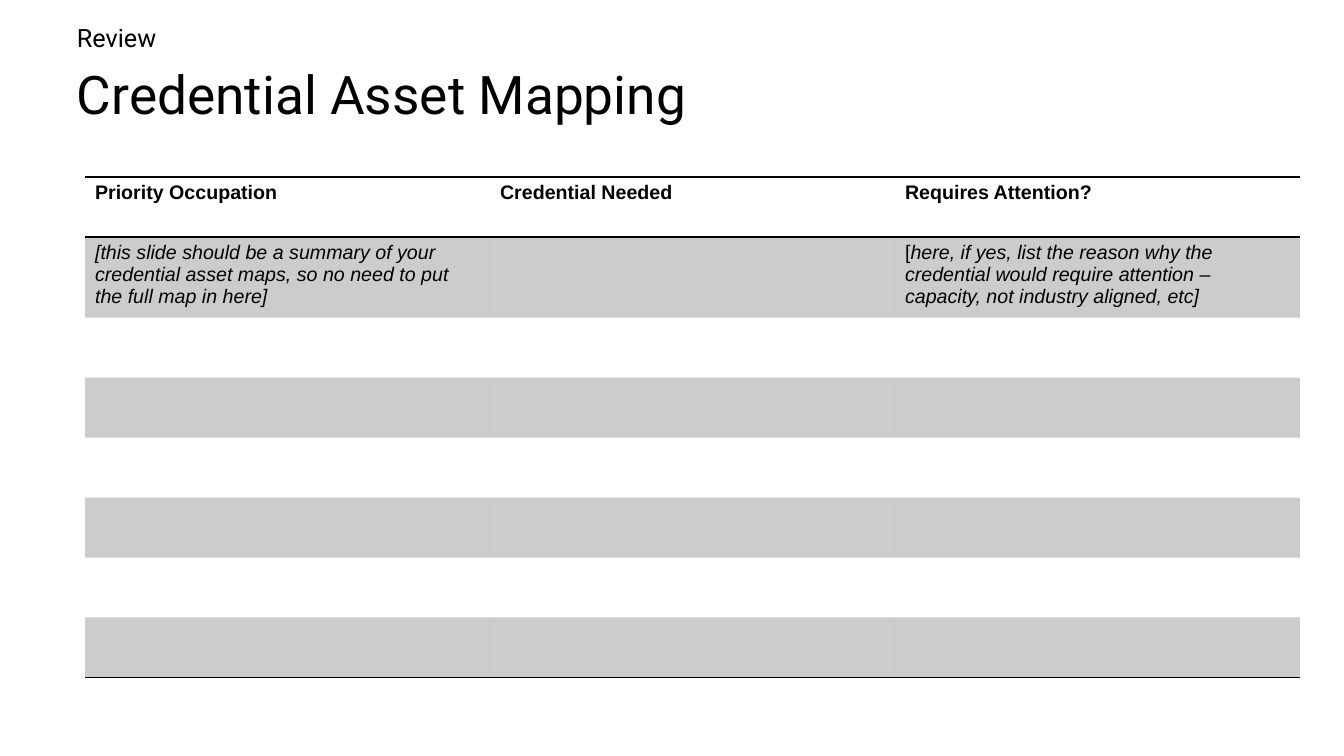
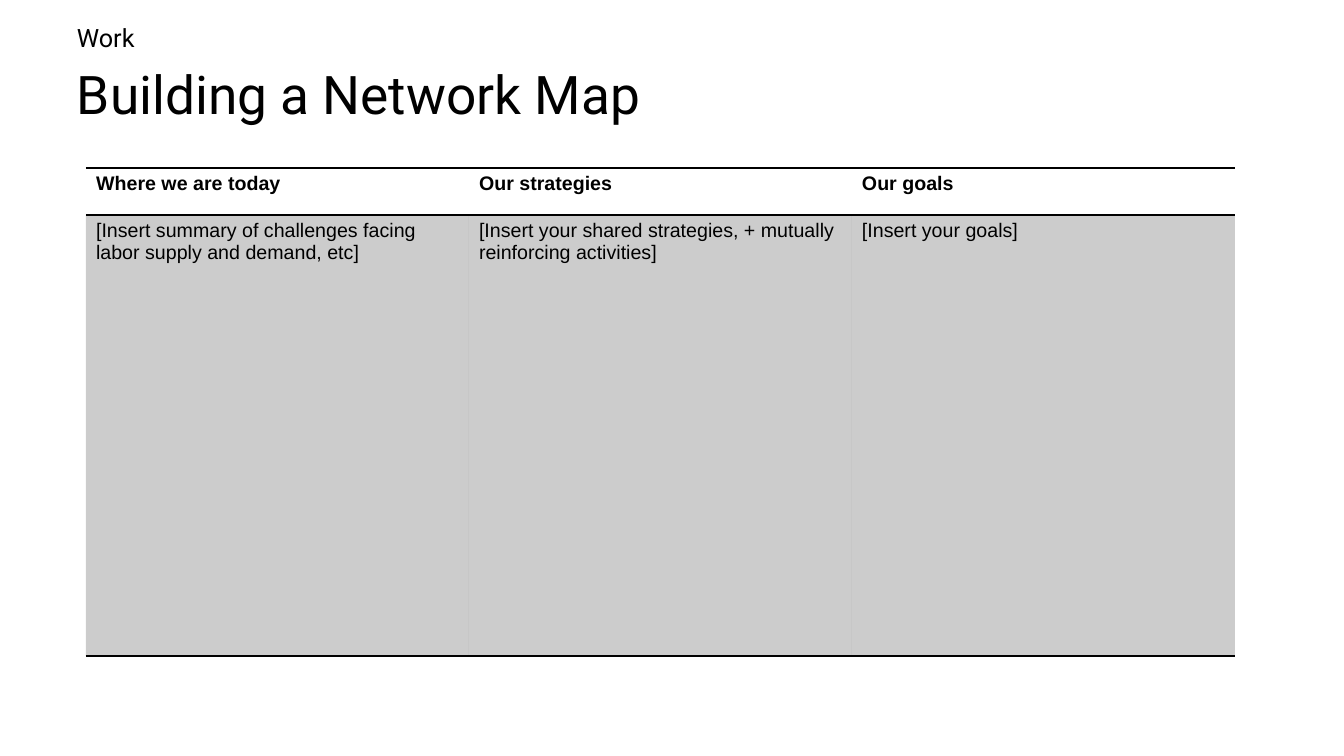
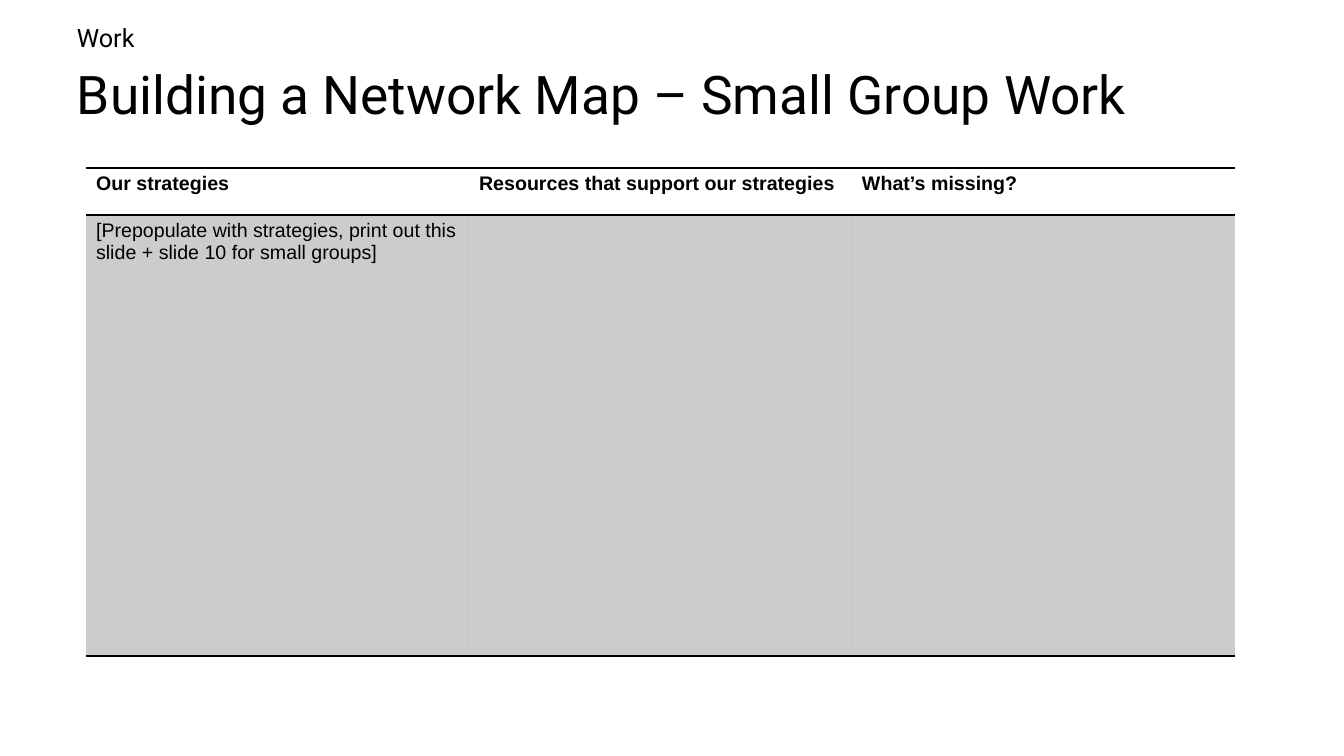
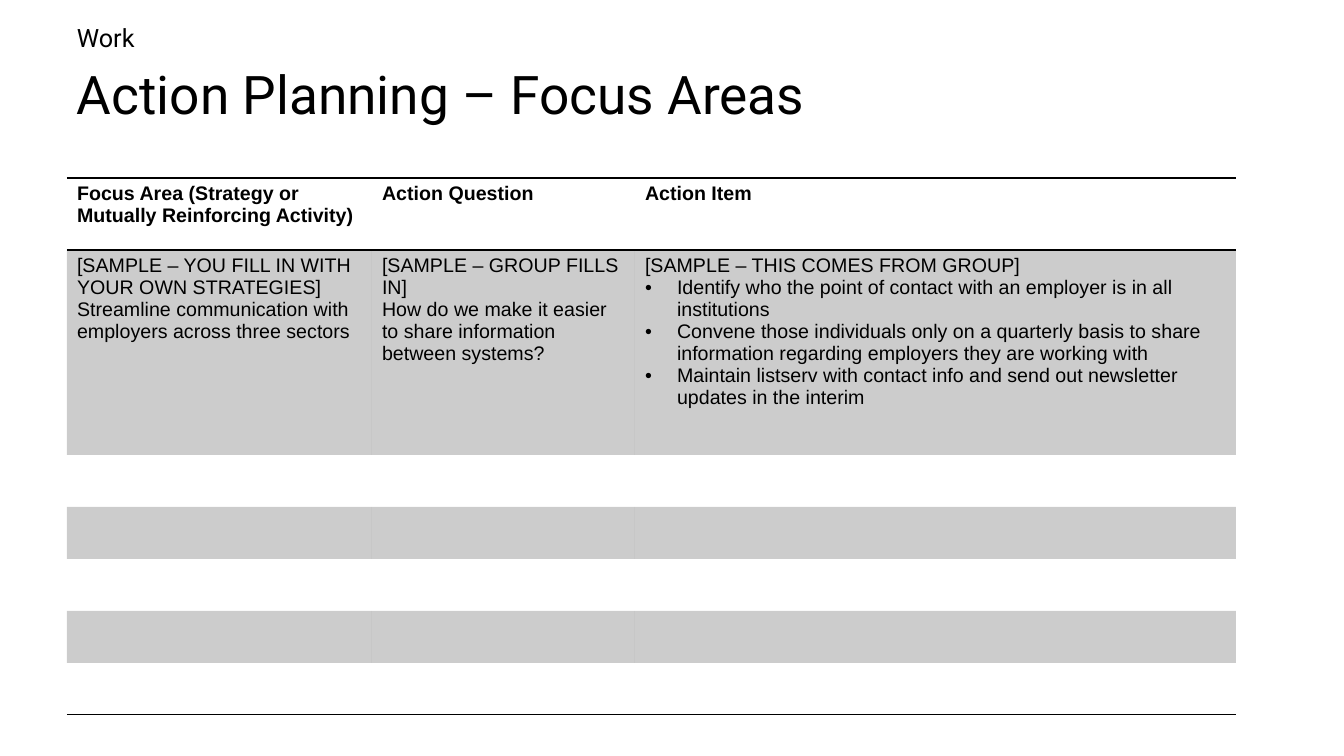
from lxml import etree
from pptx import Presentation, util as u
from pptx.dml.color import RGBColor
from pptx.enum import text as t
from pptx.oxml import ns

PX = 914400 / 100.8
COLORS = {"ink": "000000", "page": "FFFFFF"}
BAND_ALPHA = "20000"
NO_STYLE_NO_GRID = "{2D5ABB26-0587-4C30-8999-92F81FD0307C}"
BULLET_INDENT = 32
BOTTOM = 1


def px(length):
    return u.Emu(round(length * PX))


def write(frame, content, size=14, font="Arial", bold=False):
    """Fill a frame: a newline starts a paragraph, • a bullet, *...* is italic."""
    frame.word_wrap = True
    for index, line in enumerate(content.split("\n")):
        paragraph = frame.add_paragraph() if index else frame.paragraphs[0]
        if line.startswith("•"):
            line = line[1:]
            properties = paragraph._p.get_or_add_pPr()
            properties.set("marL", str(px(BULLET_INDENT)))
            properties.set("indent", str(-px(BULLET_INDENT)))
            etree.SubElement(properties, ns.qn("a:buFont"), typeface="Arial")
            etree.SubElement(properties, ns.qn("a:buChar"), char="•")
        for part, words in enumerate(line.split("*")):
            if words:
                run = paragraph.add_run()
                run.text = words
                run.font.size = u.Pt(size)
                run.font.name = font
                run.font.bold = bold
                run.font.italic = part % 2 == 1
                run.font.color.rgb = RGBColor.from_string(COLORS["ink"])


network_table = {"left": 86, "top": 168, "columns": [383] * 3, "rows": [47, 441]}

slides = [
    {
        "section": "Review",
        "title": "Credential Asset Mapping",
        "left": 85, "top": 177, "columns": [405] * 3, "rows": [60, 76] + [60] * 6,
        "header": ["Priority Occupation", "Credential Needed", "Requires Attention?"],
        "body": [
            "*[this slide should be a summary of your credential asset maps, "
            "so no need to put the full map in here]*",
            "",
            "[*here, if yes, list the reason why the credential would require "
            "attention – capacity, not industry aligned, etc]*",
        ],
    },
    {
        "section": "Work",
        "title": "Building a Network Map",
        **network_table,
        "header": ["Where we are today", "Our strategies", "Our goals"],
        "body": [
            "[Insert summary of challenges facing labor supply and demand, etc]",
            "[Insert your shared strategies, + mutually reinforcing activities]",
            "[Insert your goals]",
        ],
    },
    {
        "section": "Work",
        "title": "Building a Network Map – Small Group Work",
        **network_table,
        "header": ["Our strategies", "Resources that support our strategies", "What’s missing?"],
        "body": [
            "[Prepopulate with strategies, print out this slide + slide 10 for small groups]",
            "",
            "",
        ],
    },
    {
        "section": "Work",
        "title": "Action Planning – Focus Areas",
        "left": 67, "top": 178, "columns": [305, 263, 601], "rows": [72, 205] + [52] * 5,
        "header": [
            "Focus Area (Strategy or Mutually Reinforcing Activity)",
            "Action Question",
            "Action Item",
        ],
        "body": [
            "[SAMPLE – YOU FILL IN WITH YOUR OWN STRATEGIES]\n"
            "Streamline communication with employers across three sectors",
            "[SAMPLE – GROUP FILLS IN]\n"
            "How do we make it easier to share information between systems?",
            "[SAMPLE – THIS COMES FROM GROUP]\n"
            "•Identify who the point of contact with an employer is in all institutions\n"
            "•Convene those individuals only on a quarterly basis to share information "
            "regarding employers they are working with\n"
            "•Maintain listserv with contact info and send out newsletter updates in the interim",
        ],
    },
]

presentation = Presentation()
presentation.slide_width = px(1344)
presentation.slide_height = px(756)
blank = presentation.slide_layouts[6]

for content in slides:
    slide = presentation.slides.add_slide(blank)
    slide.background.fill.solid()
    slide.background.fill.fore_color.rgb = RGBColor.from_string(COLORS["page"])

    title = slide.shapes.add_textbox(px(67), px(30), px(1210), px(126)).text_frame
    title.vertical_anchor = t.MSO_ANCHOR.MIDDLE
    write(title, content["title"], size=38, font="Roboto")
    section = slide.shapes.add_textbox(px(67), px(17), px(104), px(40)).text_frame
    write(section, content["section"], size=18, font="Roboto")

    columns, rows = content["columns"], content["rows"]
    table = slide.shapes.add_table(
        len(rows), len(columns), px(content["left"]), px(content["top"]),
        px(sum(columns)), px(sum(rows)),
    ).table
    table.horz_banding = False
    table._tbl.tblPr.find(ns.qn("a:tableStyleId")).text = NO_STYLE_NO_GRID
    for column, width in zip(table.columns, columns):
        column.width = px(width)

    texts = [content["header"], content["body"]]
    for row_index, height in enumerate(rows):
        table.rows[row_index].height = px(height)
        for column_index in range(len(columns)):
            cell = table.cell(row_index, column_index)
            if row_index < len(texts):
                write(cell.text_frame, texts[row_index][column_index], bold=row_index == 0)

            if row_index % 2:
                cell.fill.solid()
                cell.fill.fore_color.rgb = RGBColor.from_string(COLORS["ink"])
                color = cell._tc.tcPr.find(".//" + ns.qn("a:srgbClr"))
                etree.SubElement(color, ns.qn("a:alpha"), val=BAND_ALPHA)
            else:
                cell.fill.background()

            edges = []
            if row_index == 0:
                edges = ["a:lnT", "a:lnB"]
            elif row_index == len(rows) - BOTTOM:
                edges = ["a:lnB"]
            for position, edge in enumerate(edges):
                line = etree.Element(ns.qn(edge), w=str(u.Pt(1)))
                fill = etree.SubElement(line, ns.qn("a:solidFill"))
                etree.SubElement(fill, ns.qn("a:srgbClr"), val=COLORS["ink"])
                cell._tc.tcPr.insert(position, line)

presentation.save("out.pptx")
